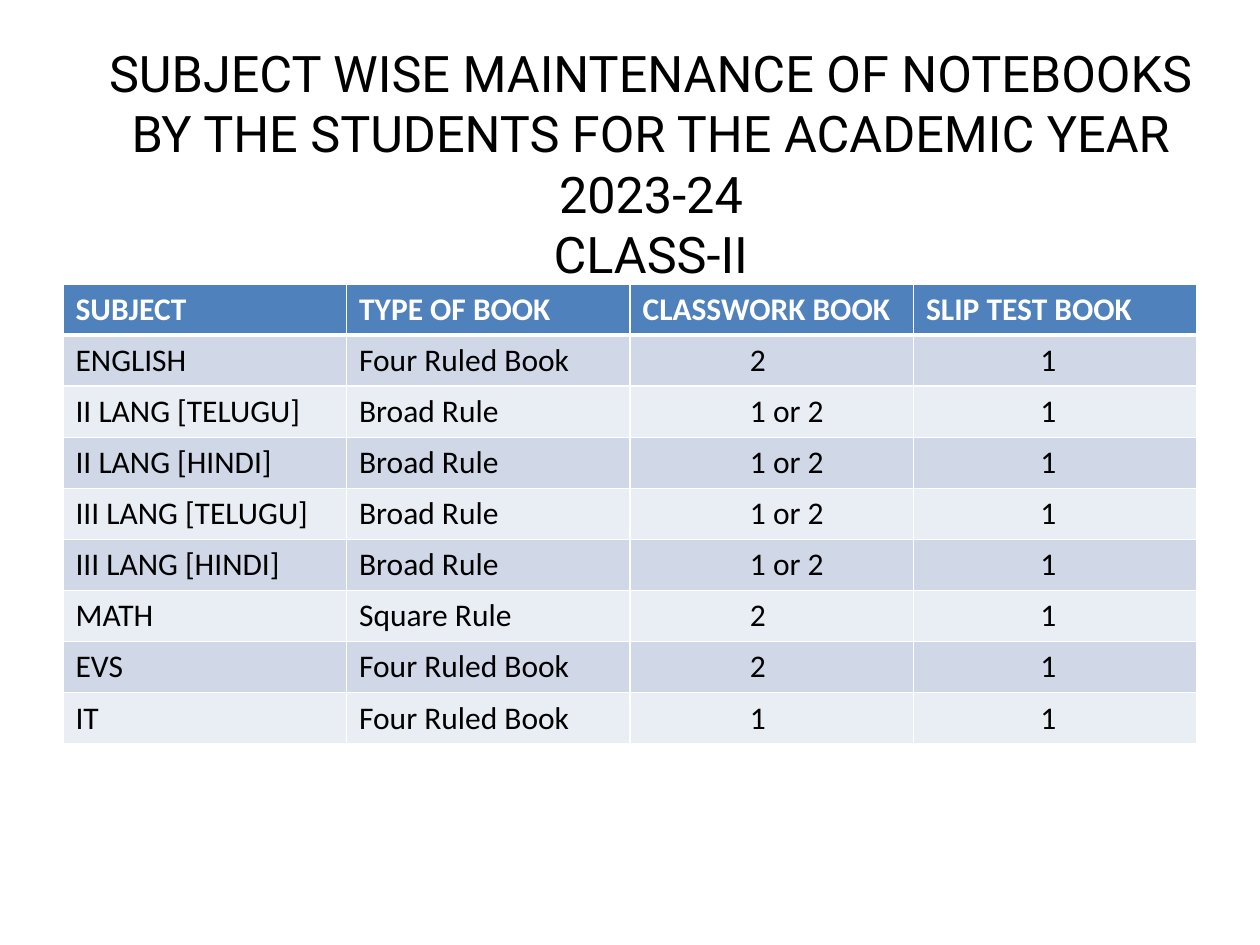
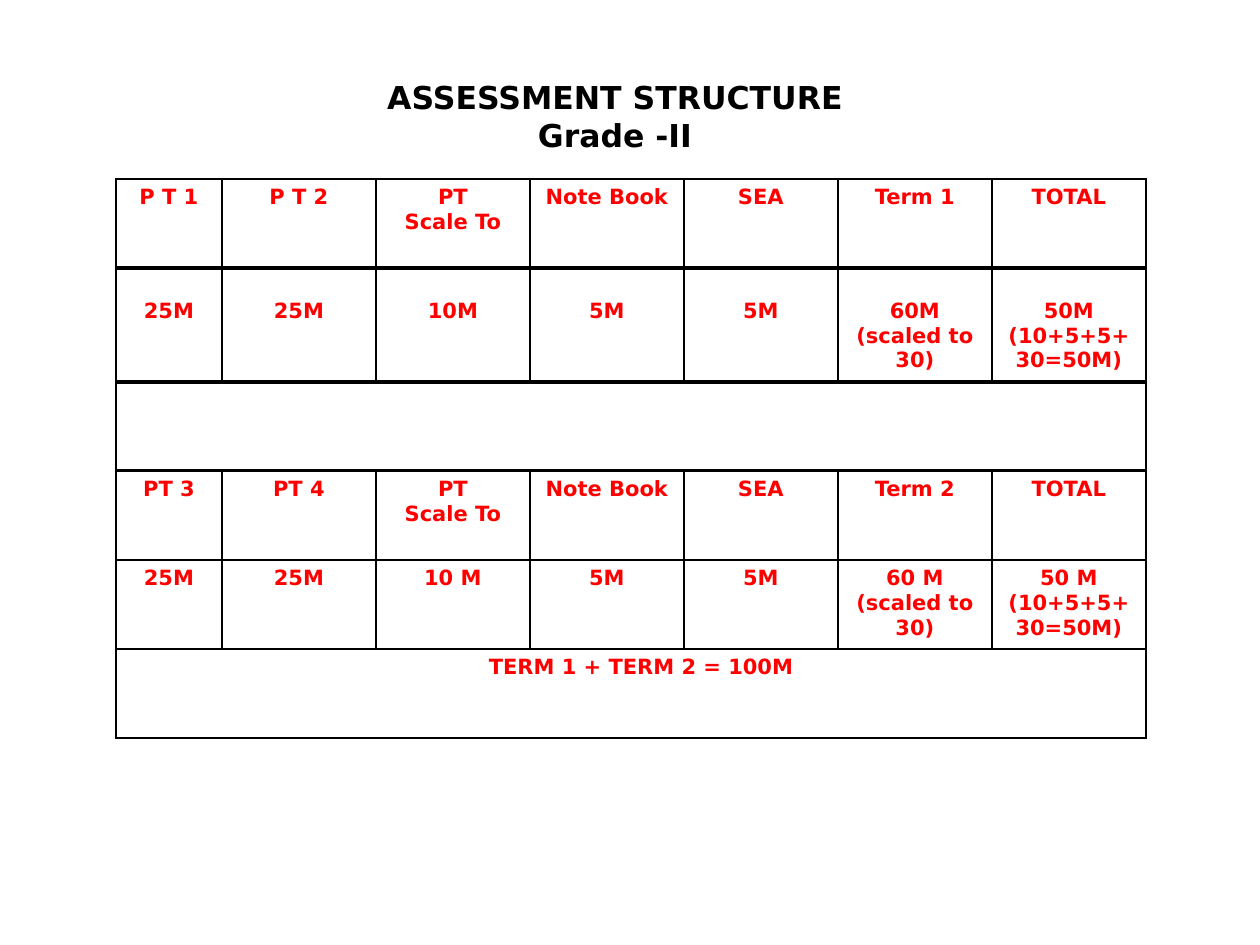
"""Builds two slides on the notebooks and assessment of class II."""
import pptx
import pptx.dml.color
import pptx.enum.text
import pptx.oxml
import pptx.oxml.ns
import pptx.util

RGBColor = pptx.dml.color.RGBColor
Align = pptx.enum.text.PP_ALIGN
Anchor = pptx.enum.text.MSO_ANCHOR

EMU_PER_PX = 914400 / 126
WHITE = RGBColor(0xFF, 0xFF, 0xFF)
BLACK = RGBColor(0x00, 0x00, 0x00)
RED = RGBColor(0xFF, 0x00, 0x00)
HEADER_BLUE = RGBColor(0x4F, 0x81, 0xBD)
BANDS = (RGBColor(0xD0, 0xD8, 0xE8), RGBColor(0xE9, 0xED, 0xF4))

NOTEBOOKS = [
    ("SUBJECT", "TYPE OF BOOK", "CLASSWORK BOOK", "SLIP TEST BOOK"),
    ("ENGLISH", "Four Ruled Book", "2", "1"),
    ("II LANG [TELUGU]", "Broad Rule", "1 or 2", "1"),
    ("II LANG [HINDI]", "Broad Rule", "1 or 2", "1"),
    ("III LANG [TELUGU]", "Broad Rule", "1 or 2", "1"),
    ("III LANG [HINDI]", "Broad Rule", "1 or 2", "1"),
    ("MATH", "Square Rule", "2", "1"),
    ("EVS", "Four Ruled Book", "2", "1"),
    ("IT", "Four Ruled Book", "1", "1"),
]
COUNT_INDENTS = {2: 120, 3: 127}

ASSESSMENT = [
    ("P T 1", "P T 2", "PT\nScale To", "Note Book", "SEA", "Term 1", "TOTAL"),
    ("25M", "25M", "10M", "5M", "5M",
     "60M\n(scaled to 30)", "50M\n(10+5+5+30=50M)"),
    ("",) * 7,
    ("PT 3", "PT 4", "PT\nScale To", "Note Book", "SEA", "Term 2", "TOTAL"),
    ("25M", "25M", "10 M", "5M", "5M",
     "60 M\n(scaled to 30)", "50 M\n(10+5+5+30=50M)"),
    ("TERM 1 + TERM 2 = 100M",) + ("",) * 6,
]
MARKS_ROW, GAP_ROW, SUM_ROW = 1, 2, 5


def px(length):
    """Turn a length in px into EMU."""
    return pptx.util.Emu(round(length * EMU_PER_PX))


def write_text(frame, text, *, font, size, color, bold=False, align=Align.LEFT):
    """Fill a text frame with one formatted paragraph per line of text."""
    for index, line in enumerate(text.split("\n")):
        para = frame.paragraphs[0] if index == 0 else frame.add_paragraph()
        para.alignment = align
        span = para.add_run()
        span.text = line
        span.font.name = font
        span.font.size = pptx.util.Pt(size)
        span.font.bold = bold
        span.font.color.rgb = color


def add_titled_page(deck, text, place, anchor, **text_format):
    """Add a title-only page with its title moved and formatted."""
    page = deck.slides.add_slide(deck.slide_layouts[5])
    box = page.shapes.title
    box.left, box.top, box.width, box.height = map(px, place)
    frame = box.text_frame
    frame.word_wrap = True
    frame.auto_size = pptx.enum.text.MSO_AUTO_SIZE.NONE
    frame.vertical_anchor = anchor
    write_text(frame, text, color=BLACK, align=Align.CENTER, **text_format)
    return page


def set_borders(cell, color, top, bottom):
    """Draw the cell's sides 1 pt wide, its top and bottom as given."""
    properties = cell._tc.get_or_add_tcPr()
    for side, width in (("L", 1), ("R", 1), ("T", top), ("B", bottom)):
        properties.append(pptx.oxml.parse_xml(
            f'<a:ln{side} {pptx.oxml.ns.nsdecls("a")} w="{pptx.util.Pt(width)}">'
            f'<a:solidFill><a:srgbClr val="{color}"/></a:solidFill></a:ln{side}>'))


def add_grid(page, rows, place, border_color, rules):
    """Add an unstyled table whose horizontal rules have the given widths."""
    grid = page.shapes.add_table(len(rows), len(rows[0]), *map(px, place)).table
    grid.first_row = grid.horz_banding = False
    for index, row in enumerate(grid.rows):
        for cell in row.cells:
            set_borders(cell, border_color, rules[index], rules[index + 1])
            cell.fill.background()
    return grid


def add_notebook_table(page):
    """Add the banded table of notebooks for each subject."""
    rules = [1, 3] + [1] * (len(NOTEBOOKS) - 1)
    grid = add_grid(page, NOTEBOOKS, (63, 284, 1134, 460), WHITE, rules)
    for row, texts in enumerate(NOTEBOOKS):
        header = row == 0
        for column, text in enumerate(texts):
            cell = grid.cell(row, column)
            cell.fill.solid()
            cell.fill.fore_color.rgb = HEADER_BLUE if header else BANDS[(row - 1) % 2]
            if not header and column in COUNT_INDENTS:
                cell.margin_left = px(COUNT_INDENTS[column])
            write_text(cell.text_frame, text, font="Calibri", size=18,
                       color=WHITE if header else BLACK, bold=header)


def add_assessment_table(page):
    """Add the ruled table of marks for both terms."""
    grid = add_grid(page, ASSESSMENT, (116, 179, 1030, 559), BLACK,
                    [1, 2, 2, 2, 1, 1, 1])
    for index, column in enumerate(grid.columns):
        column.width = px(106 if index == 0 else 154)
    for index, row in enumerate(grid.rows):
        row.height = px(114 if index == MARKS_ROW else 89)
    for row in (GAP_ROW, SUM_ROW):
        grid.cell(row, 0).merge(grid.cell(row, len(grid.columns) - 1))
    for cell in grid.rows[MARKS_ROW].cells:
        cell.margin_top = px(31)
    grid.cell(SUM_ROW, 0).margin_left = px(33)
    for row, texts in enumerate(ASSESSMENT):
        for column, text in enumerate(texts):
            if text:
                write_text(grid.cell(row, column).text_frame, text, size=12,
                           font="DejaVu Sans", color=RED, bold=True,
                           align=Align.CENTER)


def main():
    """Build both pages and save the deck."""
    deck = pptx.Presentation()
    deck.slide_width, deck.slide_height = px(1260), px(945)
    page = add_titled_page(
        deck, "SUBJECT WISE MAINTENANCE OF NOTEBOOKS BY THE STUDENTS "
        "FOR THE ACADEMIC YEAR 2023-24\nCLASS-II",
        (84, 84, 1134, 158), Anchor.MIDDLE, font="Roboto", size=28.8)
    add_notebook_table(page)
    page = add_titled_page(
        deck, "ASSESSMENT STRUCTURE\nGrade -II", (116, 72, 998, 165),
        Anchor.TOP, font="DejaVu Sans", size=18, bold=True)
    add_assessment_table(page)
    deck.save("out.pptx")


if __name__ == "__main__":
    main()
